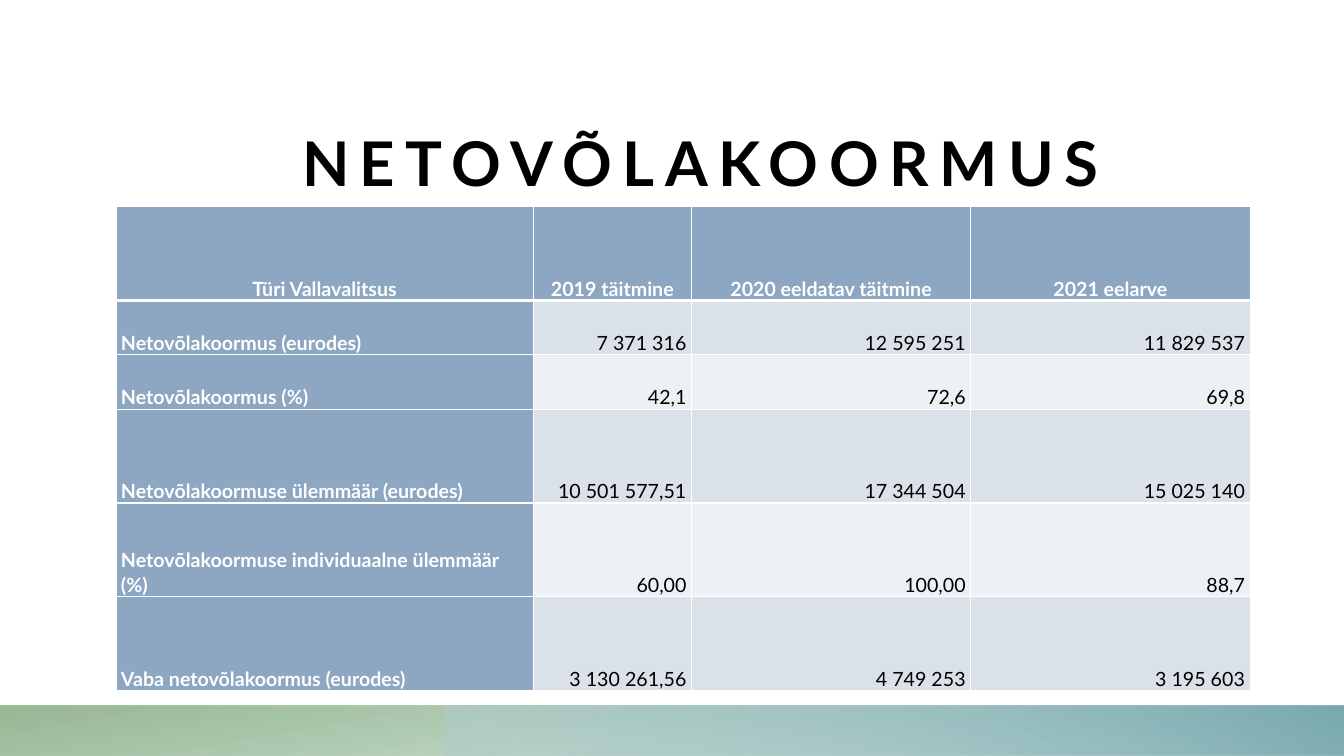
from lxml import etree
from pptx import Presentation
from pptx import util as u
from pptx.dml.color import RGBColor
from pptx.enum import shapes, text
from pptx.oxml import ns

WHITE = RGBColor(0xFF, 0xFF, 0xFF)
BLACK = RGBColor(0, 0, 0)
HEADING_BLUE = RGBColor(0x8D, 0xA6, 0xC2)
ROW_DARK = RGBColor(0xDB, 0xE1, 0xE9)
ROW_LIGHT = RGBColor(0xEE, 0xF1, 0xF4)
GREEN = RGBColor(0x77, 0xAF, 0x87)
OLIVE = RGBColor(0x87, 0xAB, 0x81)
PALE_TEAL = RGBColor(0xAF, 0xCC, 0xD0)
TEAL = RGBColor(0x79, 0xAA, 0xB0)
FONT = "Lato"

COLUMN_WIDTHS = [4.14, 1.57, 2.77, 2.77]
ROW_HEIGHTS = [0.93, 0.54, 0.54, 0.93, 0.93, 0.93]
DEBT_ROWS = [
    ["Türi Vallavalitsus", "2019 täitmine", "2020 eeldatav täitmine", "2021 eelarve"],
    ["Netovõlakoormus (eurodes)", "7 371 316", "12 595 251", "11 829 537"],
    ["Netovõlakoormus (%)", "42,1", "72,6", "69,8"],
    ["Netovõlakoormuse ülemmäär (eurodes)", "10 501 577,51", "17 344 504", "15 025 140"],
    ["Netovõlakoormuse individuaalne ülemmäär (%)", "60,00", "100,00", "88,7"],
    ["Vaba netovõlakoormus (eurodes)", "3 130 261,56", "4 749 253", "3 195 603"],
]


def apply_format(target, values):
    for name, value in values.items():
        setattr(target, name, value)


def to_inches(box):
    return [u.Inches(length) for length in box]


def format_text(paragraph, size, color, bold):
    font = paragraph.runs[0].font
    apply_format(font, {"name": FONT, "size": u.Pt(size), "bold": bold})
    font.color.rgb = color


def add_title(slide, box, words):
    title = slide.shapes.title
    apply_format(title, dict(zip(("left", "top", "width", "height"), to_inches(box))))
    frame = title.text_frame
    frame.text = words
    apply_format(frame, {
        "margin_left": 0, "margin_right": 0, "margin_top": 0, "margin_bottom": 0,
        "vertical_anchor": text.MSO_ANCHOR.BOTTOM, "word_wrap": True,
        "auto_size": text.MSO_AUTO_SIZE.NONE,
    })
    paragraph = frame.paragraphs[0]
    paragraph.alignment = text.PP_ALIGN.CENTER
    format_text(paragraph, 44, BLACK, True)
    # Letter spacing in hundredths of a point
    paragraph.runs[0].font._element.set("spc", "750")


def add_band(slide, box, stops, angle, rotation=0):
    """Stops are (position %, colour, opacity %); angle runs clockwise."""
    band = slide.shapes.add_shape(shapes.MSO_SHAPE.RECTANGLE, *to_inches(box))
    band.shadow.inherit = False
    band.line.fill.background()
    band.rotation = rotation
    band._element.spPr.find(ns.qn("a:xfrm")).set("flipH", "1")
    band.fill.gradient()
    band.fill.gradient_angle = 360 - angle
    for stop, (position, color, opacity) in zip(band.fill.gradient_stops, stops):
        stop.position = position / 100
        stop.color.rgb = color
        color_element = stop._gs.find(ns.qn("a:srgbClr"))
        etree.SubElement(color_element, ns.qn("a:alpha"), val=str(opacity * 1000))


def add_footer(slide, box):
    left, top, width, height = box
    add_band(slide, box, [(14, GREEN, 28), (100, OLIVE, 85)], 100, rotation=180)
    inset = 4.42
    add_band(slide, (left + inset, top, width - inset, height),
             [(9, PALE_TEAL, 55), (99, TEAL, 100)], 240)


def set_borders(cell, widths):
    properties = cell._tc.get_or_add_tcPr()
    for index, (side, width) in enumerate(widths.items()):
        line = etree.Element(ns.qn(f"a:ln{side}"), w=str(u.Pt(width)))
        fill = etree.SubElement(line, ns.qn("a:solidFill"))
        etree.SubElement(fill, ns.qn("a:srgbClr"), val=str(WHITE))
        properties.insert(index, line)


def fill_cell(cell, words, row, column):
    is_heading = row == 0 or column == 0
    cell.text = words
    apply_format(cell, {
        "margin_left": u.Inches(0.05), "margin_right": u.Inches(0.05),
        "margin_top": 0, "margin_bottom": 0,
        "vertical_anchor": text.MSO_ANCHOR.BOTTOM,
    })
    cell.fill.solid()
    band_color = ROW_DARK if row % 2 else ROW_LIGHT
    cell.fill.fore_color.rgb = HEADING_BLUE if is_heading else band_color
    if row == 0:
        alignment = text.PP_ALIGN.CENTER
    else:
        alignment = text.PP_ALIGN.RIGHT if column else text.PP_ALIGN.LEFT
    paragraph = cell.text_frame.paragraphs[0]
    apply_format(paragraph, {
        "alignment": alignment, "line_spacing": 1.07, "space_after": u.Pt(8),
    })
    format_text(paragraph, 14, WHITE if is_heading else BLACK, is_heading)
    # A thicker line separates the header from the body
    set_borders(cell, {"L": 1, "R": 1, "T": 3 if row == 1 else 1, "B": 3 if row == 0 else 1})


def add_debt_table(slide, box):
    table = slide.shapes.add_table(len(DEBT_ROWS), len(COLUMN_WIDTHS), *to_inches(box)).table
    for column, width in zip(table.columns, COLUMN_WIDTHS):
        column.width = u.Inches(width)
    for row, height in zip(table.rows, ROW_HEIGHTS):
        row.height = u.Inches(height)
    for row, values in enumerate(DEBT_ROWS):
        for column, words in enumerate(values):
            fill_cell(table.cell(row, column), words, row, column)


def main():
    presentation = Presentation()
    presentation.slide_width = u.Inches(13.33)
    presentation.slide_height = u.Inches(7.5)
    slide = presentation.slides.add_slide(presentation.slide_layouts[5])
    # Footer bands
    add_footer(slide, (0, 7, 13.33, 0.5))
    # Title and table
    add_title(slide, (1.5, 0.84, 10.9, 1.13), "NETOVÕLAKOORMUS")
    add_debt_table(slide, (1.15, 2.05, sum(COLUMN_WIDTHS), sum(ROW_HEIGHTS)))
    presentation.save("out.pptx")


if __name__ == "__main__":
    main()
